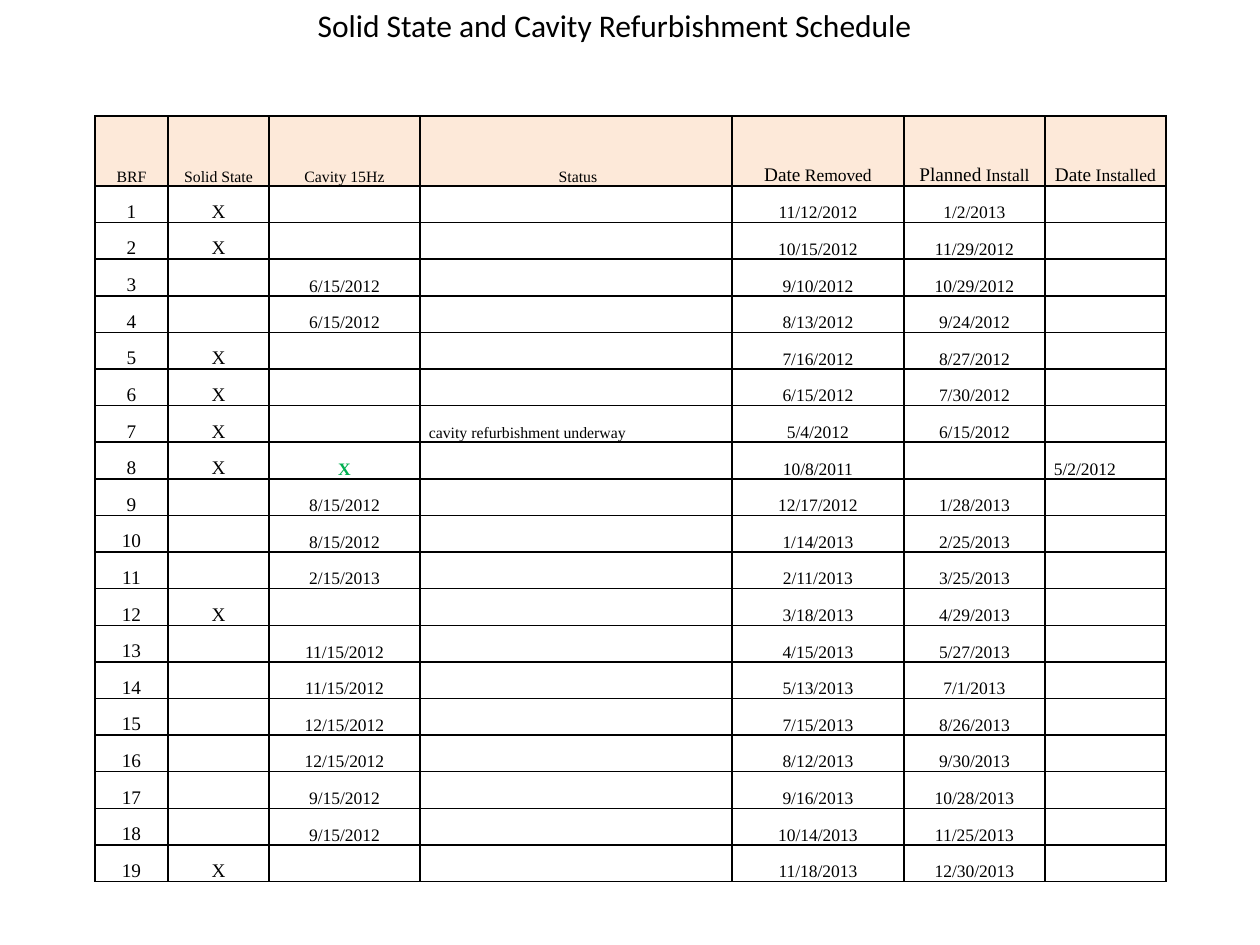
import lxml.etree
import pptx
import pptx.dml.color
import pptx.enum.text
import pptx.oxml.ns
import pptx.util

SCALE = 914400 / 126  # EMU in one px
HUES = {"ink": "000000", "head": "FDE9D9", "done": "00B050"}
SERIF = "Times New Roman"
ALIGN = pptx.enum.text.PP_ALIGN
ANCHOR = pptx.enum.text.MSO_ANCHOR

WIDTHS = [73, 101, 151, 312, 172, 141, 121]
HEAD_H, TABLE_H = 70, 766

# Each heading is a list of (text, points)
HEADS = [
    [("BRF", 9)],
    [("Solid State", 9)],
    [("Cavity 15Hz", 9)],
    [(" Status", 9)],
    [("Date", 11), (" Removed", 10)],
    [("Planned", 11), (" Install", 10)],
    [("Date", 11), (" Installed", 10)],
]
SIZES = [11, 11, 10, 9, 10, 10, 10]
LEFT_COLS = (3, 6)

# Solid state, cavity, status, removed, planned, installed
ROWS = [
    ("X", "", "", "11/12/2012", "1/2/2013", ""),
    ("X", "", "", "10/15/2012", "11/29/2012", ""),
    ("", "6/15/2012", "", "9/10/2012", "10/29/2012", ""),
    ("", "6/15/2012", "", "8/13/2012", "9/24/2012", ""),
    ("X", "", "", "7/16/2012", "8/27/2012", ""),
    ("X", "", "", "6/15/2012", "7/30/2012", ""),
    ("X", "", "cavity refurbishment underway", "5/4/2012", "6/15/2012", ""),
    ("X", "X", "", "10/8/2011", "", "5/2/2012"),
    ("", "8/15/2012", "", "12/17/2012", "1/28/2013", ""),
    ("", "8/15/2012", "", "1/14/2013", "2/25/2013", ""),
    ("", "2/15/2013", "", "2/11/2013", "3/25/2013", ""),
    ("X", "", "", "3/18/2013", "4/29/2013", ""),
    ("", "11/15/2012", "", "4/15/2013", "5/27/2013", ""),
    ("", "11/15/2012", "", "5/13/2013", "7/1/2013", ""),
    ("", "12/15/2012", "", "7/15/2013", "8/26/2013", ""),
    ("", "12/15/2012", "", "8/12/2013", "9/30/2013", ""),
    ("", "9/15/2012", "", "9/16/2013", "10/28/2013", ""),
    ("", "9/15/2012", "", "10/14/2013", "11/25/2013", ""),
    ("X", "", "", "11/18/2013", "12/30/2013", ""),
]


def px(n):
    return pptx.util.Emu(round(n * SCALE))


def tint(name):
    return pptx.dml.color.RGBColor.from_string(HUES[name])


def write(para, text, size=10, face=SERIF, hue="ink", bold=False,
          align=ALIGN.CENTER, gap=1.15):
    """Add one formatted run to a paragraph."""
    para.alignment = align
    para.line_spacing = gap
    run = para.add_run()
    run.text = text
    font = run.font
    font.size = pptx.util.Pt(size)
    font.name = face
    font.bold = bold
    font.color.rgb = tint(hue)


def edge(cell):
    """Draw a 1 pt line on all four sides of a cell."""
    qn = pptx.oxml.ns.qn
    props = cell._tc.get_or_add_tcPr()
    for side in ("lnL", "lnR", "lnT", "lnB"):
        line = lxml.etree.SubElement(props, qn("a:" + side), w="12700")
        fill = lxml.etree.SubElement(line, qn("a:solidFill"))
        lxml.etree.SubElement(fill, qn("a:srgbClr"), val=HUES["ink"])


def set_cell(cell, parts, head=False, **form):
    """Fill a cell with its (text, points) parts."""
    cell.vertical_anchor = ANCHOR.BOTTOM
    cell.margin_left = cell.margin_right = px(9)
    cell.margin_top = cell.margin_bottom = 0
    edge(cell)
    if head:
        cell.fill.solid()
        cell.fill.fore_color.rgb = tint("head")
    else:
        cell.fill.background()
    para = cell.text_frame.paragraphs[0]
    for text, size in parts:
        if text:
            write(para, text, size=size, **form)
        else:
            # Small end mark keeps an empty row from growing
            tag = pptx.oxml.ns.qn("a:endParaRPr")
            lxml.etree.SubElement(para._p, tag, sz=str(size * 100))


def add_title(slide):
    title = slide.shapes.title
    title.left, title.top = px(305), px(0)
    title.width, title.height = px(626), px(51)
    frame = title.text_frame
    frame.word_wrap = False
    frame.auto_size = pptx.enum.text.MSO_AUTO_SIZE.SHAPE_TO_FIT_TEXT
    frame.vertical_anchor = ANCHOR.TOP
    write(frame.paragraphs[0], "Solid State and Cavity Refurbishment Schedule",
          size=18, face="Calibri", align=ALIGN.LEFT, gap=1.0)


def add_plan(slide):
    frame = slide.shapes.add_table(len(ROWS) + 1, len(WIDTHS), px(95), px(116),
                                   px(sum(WIDTHS)), px(TABLE_H))
    table = frame.table
    table.first_row = table.horz_banding = False
    for col, width in zip(table.columns, WIDTHS):
        col.width = px(width)
    for row in table.rows:
        row.height = px((TABLE_H - HEAD_H) / len(ROWS))
    table.rows[0].height = px(HEAD_H)

    # Heading row
    for c, parts in enumerate(HEADS):
        set_cell(table.cell(0, c), parts, head=True)

    # Numbered rows
    for r, row in enumerate(ROWS, 1):
        for c, text in enumerate((str(r), *row)):
            form = {"align": ALIGN.LEFT if c in LEFT_COLS else ALIGN.CENTER}
            if c == 2 and text == "X":
                form.update(hue="done", bold=True)
            set_cell(table.cell(r, c), [(text, SIZES[c])], **form)


def main():
    deck = pptx.Presentation()
    deck.slide_width, deck.slide_height = px(1260), px(945)
    slide = deck.slides.add_slide(deck.slide_layouts[5])
    add_plan(slide)
    add_title(slide)
    deck.save("out.pptx")


if __name__ == "__main__":
    main()
